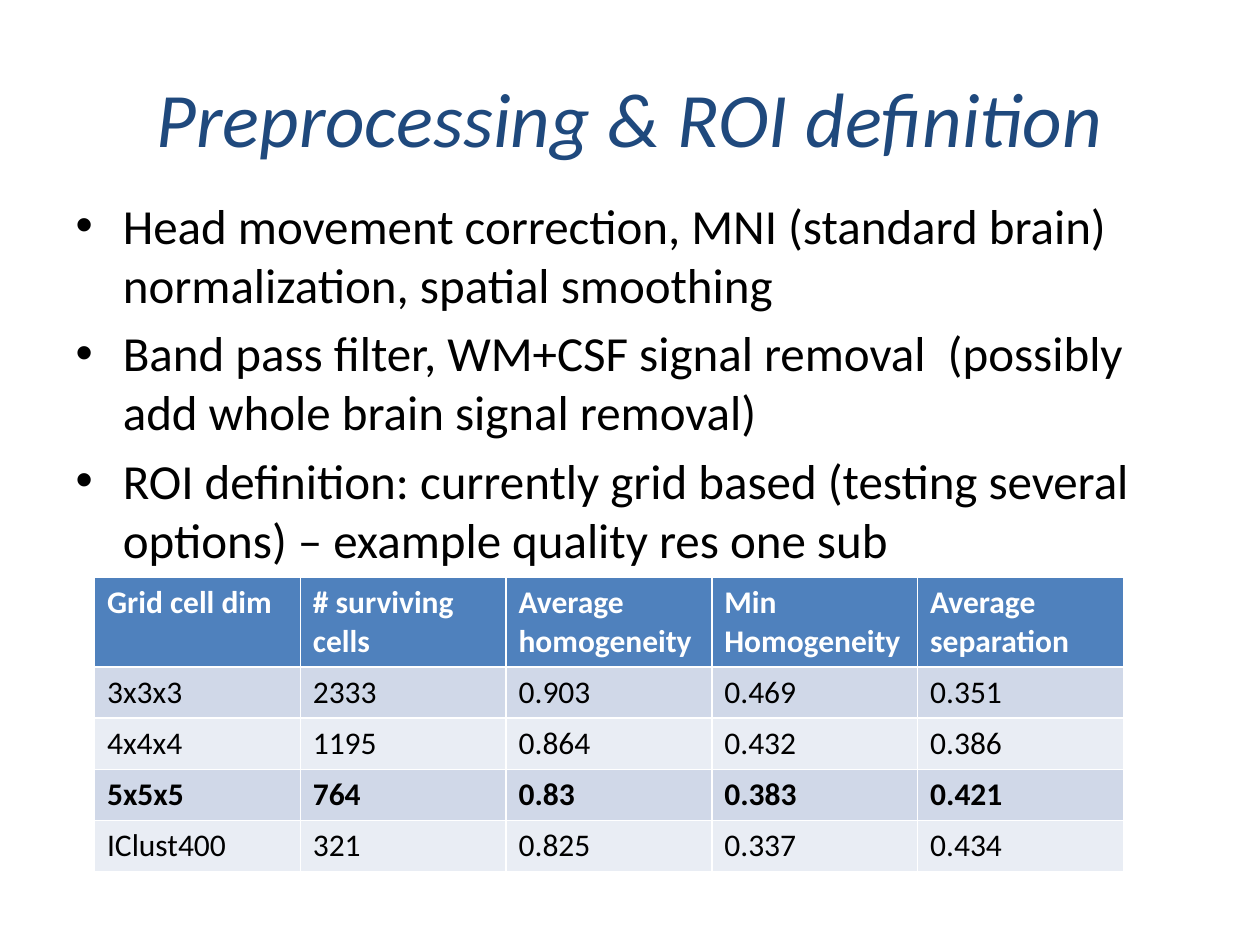
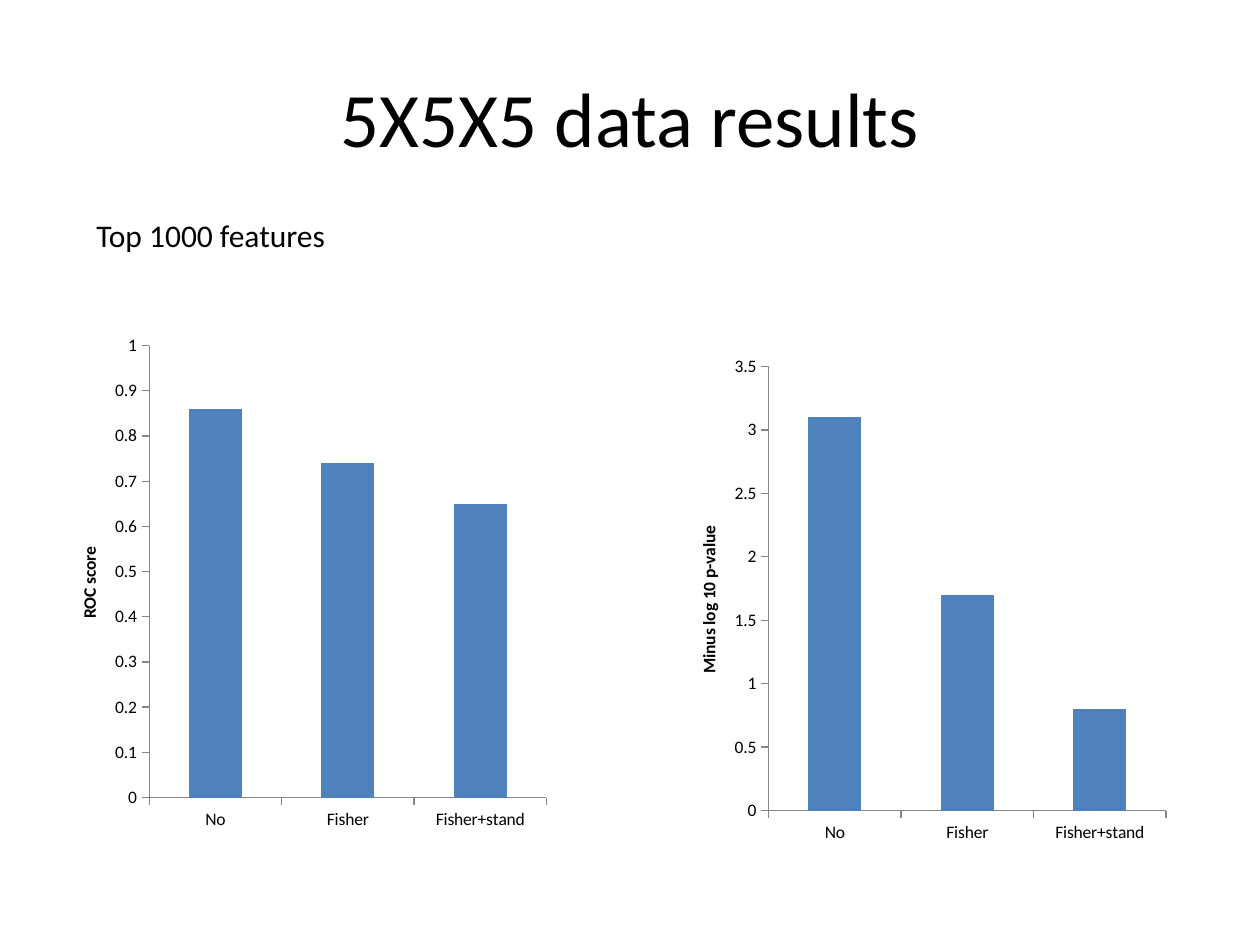
import pptx
import pptx.chart.data
import pptx.dml.color
import pptx.enum.chart
import pptx.enum.text
import pptx.util

Pt = pptx.util.Pt
RGB = pptx.dml.color.RGBColor.from_string

# Theme: colours and type sizes
THEME = {
    "text": RGB("000000"),
    "heading": RGB("1F497D"),
    "accent": RGB("4F81BD"),
    "on_accent": RGB("FFFFFF"),
    "bands": (RGB("D0D8E8"), RGB("E9EDF4")),
    "axis": RGB("868686"),
    "font": "Calibri",
    "title_size": Pt(44),
    "list_size": Pt(28),
    "small_size": Pt(18),
    "chart_size": Pt(10),
}


def style_font(font, size, color="text", **extra):
    settings = {"name": THEME["font"], "size": THEME[size], **extra}
    for attribute, value in settings.items():
        setattr(font, attribute, value)
    font.color.rgb = THEME[color]


def add_titled_slide(layout, heading, color="text", italic=False):
    slide = deck.slides.add_slide(deck.slide_layouts[layout])
    title = slide.shapes.title
    title.left, title.top, title.width, title.height = Pt(36), Pt(21.6), Pt(648), Pt(90)
    title.text_frame.text = heading
    title.text_frame.vertical_anchor = pptx.enum.text.MSO_ANCHOR.MIDDLE
    paragraph = title.text_frame.paragraphs[0]
    paragraph.alignment = pptx.enum.text.PP_ALIGN.CENTER
    style_font(paragraph.runs[0].font, "title_size", color, italic=italic)
    return slide


deck = pptx.Presentation()
deck.slide_width, deck.slide_height = Pt(720), Pt(540)

# Slide 1: preprocessing steps
preprocessing = add_titled_slide(1, "Preprocessing & ROI definition", "heading", italic=True)
steps = preprocessing.placeholders[1]
steps.left, steps.top, steps.width, steps.height = Pt(36), Pt(108), Pt(648), Pt(394.6)
steps.text_frame.text = "\n".join([
    "Head movement correction, MNI (standard brain) normalization, spatial smoothing",
    "Band pass filter, WM+CSF signal removal  (possibly add whole brain signal removal)",
    "ROI definition: currently grid based (testing several options) – example quality res one sub",
])
for step in steps.text_frame.paragraphs:
    style_font(step.runs[0].font, "list_size")

# Grid quality table
grid_quality = [
    ("Grid cell dim", "# surviving cells", "Average homogeneity", "Min Homogeneity",
     "Average separation"),
    ("3x3x3", "2333", "0.903", "0.469", "0.351"),
    ("4x4x4", "1195", "0.864", "0.432", "0.386"),
    ("5x5x5", "764", "0.83", "0.383", "0.421"),
    ("IClust400", "321", "0.825", "0.337", "0.434"),
]
CHOSEN_GRID = "5x5x5"
quality_table = preprocessing.shapes.add_table(
    len(grid_quality), len(grid_quality[0]), Pt(54), Pt(330), Pt(588), Pt(167.2)).table
for row, values in enumerate(grid_quality):
    is_header = row == 0
    quality_table.rows[row].height = Pt(50.4 if is_header else 29.2)
    for column, value in enumerate(values):
        cell = quality_table.cell(row, column)
        cell.text = value
        cell.fill.solid()
        cell.fill.fore_color.rgb = THEME["accent"] if is_header else THEME["bands"][(row - 1) % 2]
        style_font(cell.text_frame.paragraphs[0].runs[0].font, "small_size",
                   "on_accent" if is_header else "text",
                   bold=is_header or values[0] == CHOSEN_GRID)

# Slide 2: results for the chosen grid
results = add_titled_slide(5, "5X5X5 data results")

# Score charts
normalizations = ["No", "Fisher", "Fisher+stand"]
score_charts = [
    ("ROC score", (0.86, 0.74, 0.65), 1, 0.1, (30, 186, 288, 294)),
    ("Minus log 10 p-value", (3.1, 1.7, 0.8), 3.5, 0.5, (384, 198, 288, 289.4)),
]
for measure, scores, top_score, score_step, box in score_charts:
    chart_data = pptx.chart.data.CategoryChartData()
    chart_data.categories = normalizations
    chart_data.add_series("Series 1", scores)
    chart = results.shapes.add_chart(
        pptx.enum.chart.XL_CHART_TYPE.COLUMN_CLUSTERED, *map(Pt, box), chart_data).chart
    chart.has_legend = chart.has_title = False
    style_font(chart.font, "chart_size")

    plot = chart.plots[0]
    plot.gap_width, plot.vary_by_categories = 150, False
    bars = plot.series[0].format.fill
    bars.solid()
    bars.fore_color.rgb = THEME["accent"]

    score_axis = chart.value_axis
    for axis in (chart.category_axis, score_axis):
        axis.has_major_gridlines = False
        axis.major_tick_mark = pptx.enum.chart.XL_TICK_MARK.OUTSIDE
        axis.minor_tick_mark = pptx.enum.chart.XL_TICK_MARK.NONE
        axis.format.line.color.rgb = THEME["axis"]
        axis.format.line.width = Pt(0.75)
    scale = {"minimum_scale": 0, "maximum_scale": top_score, "major_unit": score_step}
    for attribute, value in scale.items():
        setattr(score_axis, attribute, value)
    score_axis.tick_labels.number_format = "General"
    score_axis.tick_labels.number_format_is_linked = False
    axis_title = score_axis.axis_title.text_frame
    axis_title.text = measure
    style_font(axis_title.paragraphs[0].runs[0].font, "chart_size", bold=True)

# Feature count label
feature_count = results.shapes.add_textbox(Pt(48), Pt(120), Pt(480), Pt(29)).text_frame
feature_count.word_wrap = True
feature_count.auto_size = pptx.enum.text.MSO_AUTO_SIZE.SHAPE_TO_FIT_TEXT
feature_count.text = "Top 1000 features"
style_font(feature_count.paragraphs[0].runs[0].font, "small_size")

deck.save("out.pptx")
